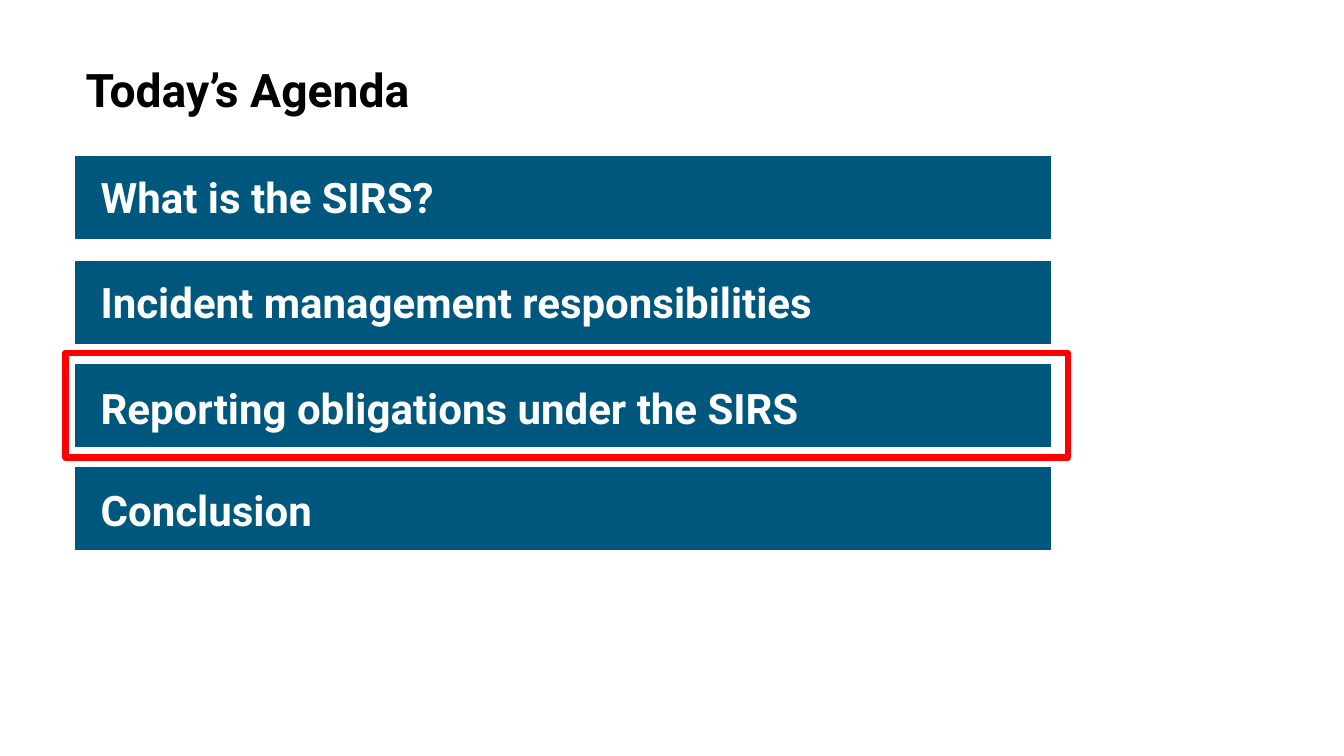
from pptx import Presentation
from pptx import util as u
from pptx.dml.color import RGBColor
from pptx.enum import shapes, text

COLORS = {"title": "000000", "bar": "00577D", "label": "FFFFFF", "frame": "FF0000"}
LEFT, BAR_WIDTH, BAR_HEIGHT = 0.75, 9.67, 0.81
LABEL_INDENT = 0.15
# Topic, top of its bar, top of its label
AGENDA = [
    ("What is the SIRS?", 1.55, 1.65),
    ("Incident management responsibilities", 2.6, 2.69),
    ("Reporting obligations under the SIRS", 3.62, 3.75),
    ("Conclusion", 4.64, 4.76),
]
CURRENT_TOPIC = 2


def write(box, words, size, color, anchor):
    frame = box.text_frame
    frame.word_wrap = True
    frame.vertical_anchor = anchor
    para = frame.paragraphs[0]
    para.alignment = text.PP_ALIGN.LEFT
    span = para.add_run()
    span.text = words
    for name, value in {"name": "Roboto", "size": u.Pt(size), "bold": True}.items():
        setattr(span.font, name, value)
    span.font.color.rgb = RGBColor.from_string(COLORS[color])
    return para


def add_rectangle(page, left, top, width, height, color, weight):
    box = page.shapes.add_shape(
        shapes.MSO_SHAPE.RECTANGLE, *map(u.Inches, (left, top, width, height)))
    box.shadow.inherit = False
    box.line.color.rgb = RGBColor.from_string(COLORS[color])
    box.line.width = u.Pt(weight)
    return box


deck = Presentation()
deck.slide_width, deck.slide_height = u.Inches(13.33), u.Inches(7.5)
page = deck.slides.add_slide(deck.slide_layouts[5])

# Title
title = page.shapes.title
placement = {"left": LEFT, "top": 0.21, "width": 11.48, "height": 1.42}
for name, value in placement.items():
    setattr(title, name, u.Inches(value))
heading = write(title, "Today’s Agenda", 33, "title", text.MSO_ANCHOR.MIDDLE)
heading.line_spacing = 0.9

# Agenda bars with their labels
for topic, bar_top, label_top in AGENDA:
    bar = add_rectangle(page, LEFT, bar_top, BAR_WIDTH, BAR_HEIGHT, "bar", 1)
    bar.fill.solid()
    bar.fill.fore_color.rgb = RGBColor.from_string(COLORS["bar"])
    label = page.shapes.add_textbox(
        *map(u.Inches, (LEFT + LABEL_INDENT, label_top, BAR_WIDTH, 0.61)))
    write(label, topic, 30, "label", text.MSO_ANCHOR.TOP)

# Frame around the current topic
frame_top = AGENDA[CURRENT_TOPIC][1] - 0.12
highlight = add_rectangle(page, LEFT - 0.1, frame_top, 9.94, 1.04, "frame", 4.5)
highlight.fill.background()

deck.save("out.pptx")
